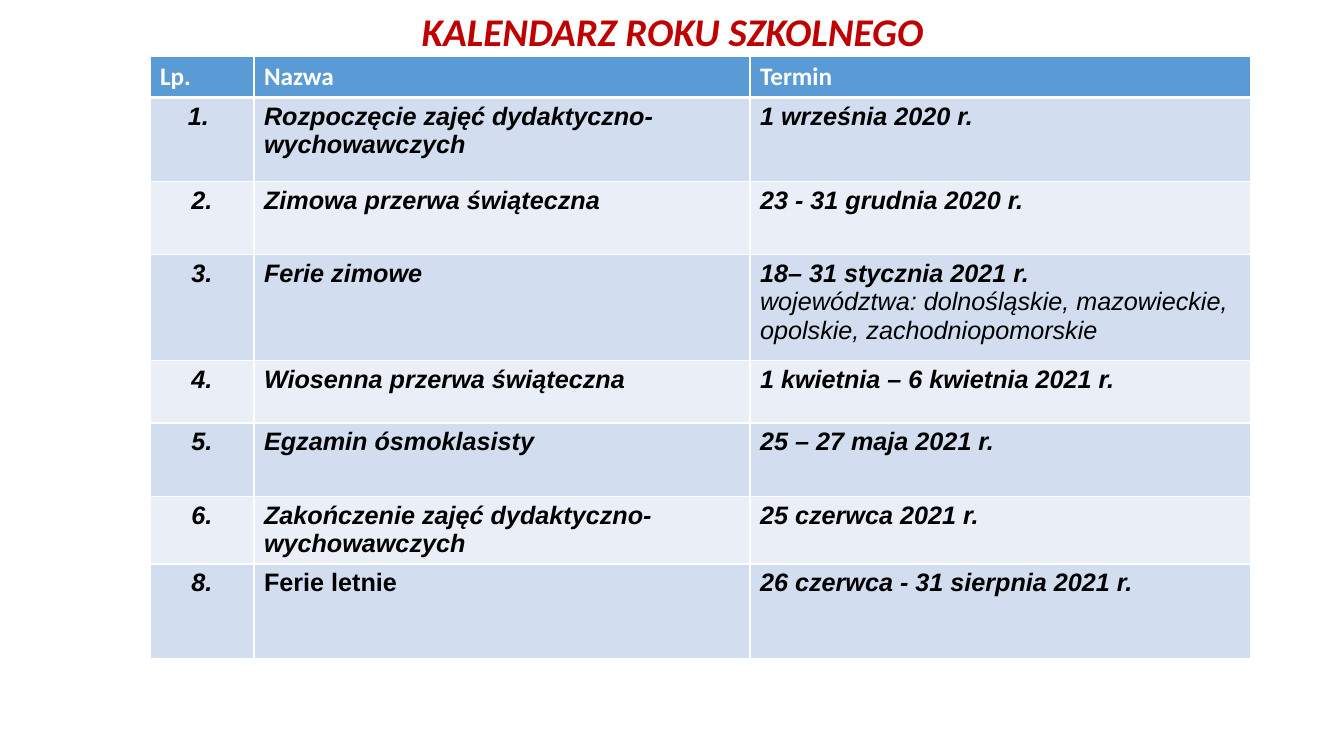
from dataclasses import dataclass

from lxml import etree
from pptx import Presentation
from pptx.dml.color import RGBColor
from pptx.enum.text import MSO_ANCHOR, MSO_AUTO_SIZE, PP_ALIGN
from pptx.oxml.ns import qn
from pptx.util import Cm, Pt

CENTER, LEFT = PP_ALIGN.CENTER, PP_ALIGN.LEFT
MIDDLE = MSO_ANCHOR.MIDDLE
NO_AUTOFIT = MSO_AUTO_SIZE.NONE
TITLE_ONLY = 5


@dataclass(frozen=True)
class Theme:
    title_color: str = "C00000"
    header_fill: str = "5B9BD5"
    header_text: str = "FFFFFF"
    row_fills: tuple = ("D2DEEF", "EAEFF7")
    row_text: str = "000000"
    border: str = "FFFFFF"
    heading_font: str = "Calibri"
    body_font: str = "Arial"
    title_size: int = 28
    table_size: int = 18
    thin: int = 1
    thick: int = 3


THEME = Theme()

HEADER = ("Lp.", "Nazwa", "Termin")
EVENTS = (
    ("1. ", "Rozpoczęcie zajęć dydaktyczno-wychowawczych", "1 września 2020 r."),
    ("2.", "Zimowa przerwa świąteczna", "23 - 31 grudnia 2020 r."),
    ("3.", "Ferie zimowe",
     "18– 31 stycznia 2021 r.\n"
     "województwa: dolnośląskie, mazowieckie, opolskie, zachodniopomorskie"),
    ("4.", "Wiosenna przerwa świąteczna", "1 kwietnia – 6 kwietnia 2021 r."),
    ("5.", "Egzamin ósmoklasisty", "25 – 27 maja 2021 r."),
    ("6.", "Zakończenie zajęć dydaktyczno-wychowawczych", "25 czerwca 2021 r."),
    ("8.", "Ferie letnie", "26 czerwca - 31 sierpnia 2021 r."),
)
UPRIGHT = "Ferie letnie"
COLUMN_WIDTHS = (2.62, 12.5, 12.62)
ROW_HEIGHTS = (1.04, 2.11, 1.85, 2.67, 1.57, 1.85, 1.7, 2.39)


def style_font(font, name, size, color, bold=True, italic=False):
    font.name, font.size = name, Pt(size)
    font.bold, font.italic = bold, italic
    font.color.rgb = RGBColor.from_string(color)


def set_borders(cell, bottom):
    """Draw the four edges; call before the cell gets its fill."""
    properties = cell._tc.get_or_add_tcPr()
    for edge in ("lnL", "lnR", "lnT", "lnB"):
        points = bottom if edge == "lnB" else THEME.thin
        line = etree.SubElement(properties, qn("a:" + edge), w=str(Pt(points)))
        fill = etree.SubElement(line, qn("a:solidFill"))
        etree.SubElement(fill, qn("a:srgbClr"), val=THEME.border)


def fill_cell(cell, color, bottom=THEME.thin):
    set_borders(cell, bottom)
    cell.fill.solid()
    cell.fill.fore_color.rgb = RGBColor.from_string(color)


def add_title(page, text, left, top, width, height):
    title = page.shapes.title
    title.left, title.top = Cm(left), Cm(top)
    title.width, title.height = Cm(width), Cm(height)
    frame = title.text_frame
    frame.text = text
    frame.auto_size = NO_AUTOFIT
    frame.vertical_anchor = MIDDLE
    para = frame.paragraphs[0]
    para.alignment, para.line_spacing = CENTER, 0.9
    style_font(para.font, THEME.heading_font, THEME.title_size,
               THEME.title_color, italic=True)


def add_calendar(page, left, top):
    frame = page.shapes.add_table(
        len(ROW_HEIGHTS), len(COLUMN_WIDTHS), Cm(left), Cm(top),
        Cm(sum(COLUMN_WIDTHS)), Cm(sum(ROW_HEIGHTS)))
    table = frame.table
    for column, width in zip(table.columns, COLUMN_WIDTHS):
        column.width = Cm(width)
    for row, height in zip(table.rows, ROW_HEIGHTS):
        row.height = Cm(height)

    # Header row
    for cell, text in zip(table.rows[0].cells, HEADER):
        fill_cell(cell, THEME.header_fill, THEME.thick)
        cell.text = text
        style_font(cell.text_frame.paragraphs[0].font, THEME.heading_font,
                   THEME.table_size, THEME.header_text)

    # Event rows, with alternating fills
    for number, event in enumerate(EVENTS):
        for column, text in enumerate(event):
            cell = table.cell(number + 1, column)
            fill_cell(cell, THEME.row_fills[number % 2])
            cell.text = text
            for line, para in enumerate(cell.text_frame.paragraphs):
                para.alignment = CENTER if column == 0 else LEFT
                style_font(para.font, THEME.body_font, THEME.table_size,
                           THEME.row_text, bold=line == 0,
                           italic=text != UPRIGHT)


def main():
    deck = Presentation()
    deck.slide_width, deck.slide_height = Cm(33.87), Cm(19.05)
    page = deck.slides.add_slide(deck.slide_layouts[TITLE_ONLY])
    add_title(page, "KALENDARZ ROKU SZKOLNEGO", 2.34, 0.28, 29.21, 1.14)
    add_calendar(page, 3.78, 1.42)
    deck.save("out.pptx")


if __name__ == "__main__":
    main()
